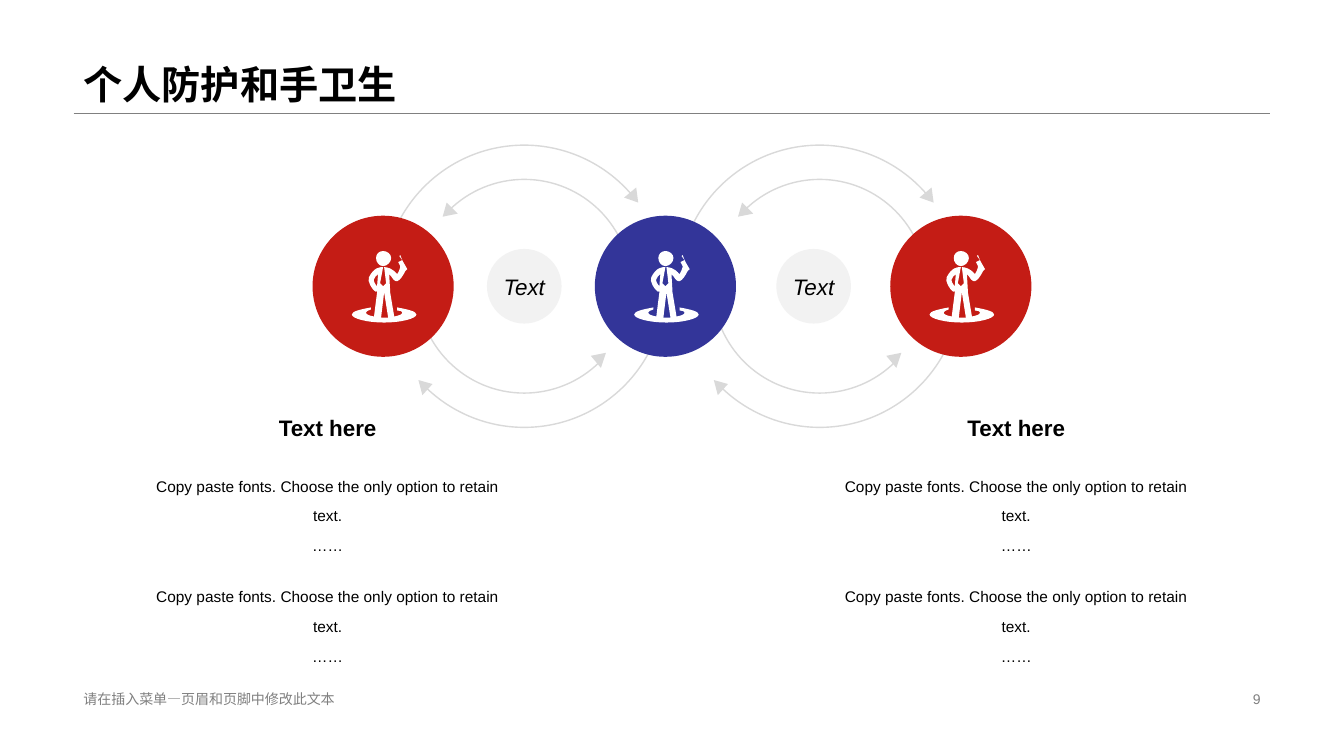
from dataclasses import dataclass
from math import cos, radians, sin, tan

from lxml.etree import Element, SubElement
from pptx import Presentation
from pptx.dml.color import RGBColor
from pptx.enum.shapes import MSO_CONNECTOR as CONN, MSO_SHAPE as SHAPE
from pptx.enum.text import MSO_ANCHOR as ANCHOR, PP_ALIGN as ALIGN
from pptx.oxml.ns import qn
from pptx.util import Pt

PX = 9144


@dataclass(frozen=True)
class Theme:
    font: str = "Arial"
    black: str = "000000"
    grey: str = "808080"
    arrow: str = "D9D9D9"
    pale: str = "F2F2F2"
    red: str = "C41C15"
    blue: str = "333599"
    white: str = "FFFFFF"
    title: int = 28
    heading: int = 16
    body: int = 11
    footer: int = 10


THEME = Theme()
LOOP_STEP = 293
LOOP_CENTER = (520, 284)
LOOP_ARROWS = [
    (140, 180, 319, [(111, -98), (99, -88), (113, -83)]),
    (106, 45, 184, [(66, 69), (76, 81), (81, 66)]),
    (106, 225, 360, [(-66, -72), (-77, -83), (-81, -69)]),
    (140, 0, 136, [(-101, 108), (-91, 97), (-105, 93)]),
]
PERSON = [
    "L 24 7 C 24 3 27 0 31 0 C 35 0 39 3 39 7 C 39 11 35 15 31 15 C 27 15 24 11 24 7",
    "L 64 63 C 64 67 49 71 32 71 C 15 71 0 67 0 63 C 0 60 8 58 19 56 L 19 58 "
    "C 16 59 14 60 14 61 C 14 63 17 64 22 65 L 25 41 L 25 40 C 24 41 23 40 23 40 "
    "C 20 38 15 30 17 26 C 22 16 28 16 30 16 L 31 16 L 28 32 L 31 35 L 34 32 L 32 16 "
    "C 35 16 40 17 45 23 C 46 21 48 18 48 16 L 48 15 L 46 11 L 50 9 L 47 5 L 48 4 "
    "L 50 9 L 51 11 L 55 18 L 53 20 C 51 24 48 29 45 30 L 44 30 C 43 30 42 29 41 28 "
    "C 40 26 38 24 37 23 L 38 40 L 38 41 L 42 65 C 47 64 50 63 50 61 "
    "C 50 60 48 59 45 59 L 45 56 C 56 58 64 60 64 63",
    "L 25 35 L 26 23 C 24 24 23 26 22 28 C 21 29 23 33 25 35",
    "L 36 66 L 32 41 L 29 66 L 36 66",
]
BODY = "Copy paste fonts. Choose the only option to retain text.\n……"


def rgb(value):
    return RGBColor.from_string(value)


def write(tf, text, size, color=THEME.black, bold=False, italic=False,
          align=ALIGN.LEFT, anchor=ANCHOR.MIDDLE, spacing=None):
    tf.word_wrap = True
    tf.vertical_anchor = anchor
    for i, line in enumerate(text.split("\n")):
        p = tf.add_paragraph() if i else tf.paragraphs[0]
        p.alignment = align
        p.line_spacing = spacing
        r = p.add_run()
        r.text = line
        f = r.font
        f.name, f.size, f.bold, f.italic = THEME.font, Pt(size), bold, italic
        f.color.rgb = rgb(color)


def text_box(s, box, text, size, **fmt):
    sp = s.shapes.add_textbox(*(v * PX for v in box))
    write(sp.text_frame, text, size, **fmt)


def style(sp, fill=None, line=None):
    sp.shadow.inherit = False
    if fill:
        sp.fill.solid()
        sp.fill.fore_color.rgb = rgb(fill)
    else:
        sp.fill.background()
    if line:
        sp.line.color.rgb = rgb(line)
        sp.line.width = Pt(1)
    else:
        sp.line.fill.background()


def outline(s, contours, close=True, **look):
    ends = [[(x * PX, y * PX) for *_, (x, y) in c] for c in contours]
    builder = s.shapes.build_freeform(*ends[0][0], scale=1.0)
    for i, points in enumerate(ends):
        if i:
            builder.move_to(*points[0])
        builder.add_line_segments(points[1:], close=close)
    sp = builder.convert_to_shape()
    edges = list(sp._element.iter(qn("a:lnTo")))
    for edge, segment in zip(edges, (seg for c in contours for seg in c[1:])):
        if len(segment) == 3:
            edge.tag = qn("a:cubicBezTo")
            for i, (x, y) in enumerate(segment[:2]):
                edge.insert(i, Element(qn("a:pt"), x=str(round(x * PX) - sp.left),
                                       y=str(round(y * PX) - sp.top)))
    style(sp, **look)


def disc(s, x, y, size, fill):
    sp = s.shapes.add_shape(SHAPE.OVAL, x * PX, y * PX, size * PX, size * PX)
    style(sp, fill=fill)
    return sp


def trace(commands, left, top):
    tokens = iter(commands.split())
    return [[(left + int(next(tokens)), top + int(next(tokens)))
             for _ in range(3 if command == "C" else 1)] for command in tokens]


def arc(cx, cy, radius, start, end):
    def at(angle, pull=0):
        a = radians(angle)
        return (cx + radius * (cos(a) - pull * sin(a)),
                cy + radius * (sin(a) + pull * cos(a)))

    stops = [start, *(q for q in range(0, 360, 90) if start < q < end), end]
    segments = [[at(start)]]
    for a, b in zip(stops, stops[1:]):
        pull = 4 / 3 * tan(radians(b - a) / 4)
        segments.append([at(a, pull), at(b, -pull), at(b)])
    return segments


def arrow_loop(s, cx, cy):
    for radius, start, end, head in LOOP_ARROWS:
        outline(s, [arc(cx, cy, radius, start, end)], close=False, line=THEME.arrow)
        outline(s, [[[(cx + x, cy + y)] for x, y in head]], fill=THEME.arrow)


def label_disc(s, x):
    tf = disc(s, x, 247, 74, THEME.pale).text_frame
    tf.margin_left = tf.margin_right = tf.margin_top = tf.margin_bottom = 0
    write(tf, "Text", THEME.heading, italic=True, align=ALIGN.CENTER)


def person_disc(s, x, color):
    disc(s, x, 214, 140, color)
    outline(s, [trace(part, x + 39, 249) for part in PERSON], fill=THEME.white)


def text_column(s, x):
    text_box(s, (x, 403, 384, 43), "Text here", THEME.heading,
             bold=True, align=ALIGN.CENTER)
    for y in (457, 567):
        text_box(s, (x, y, 384, 105), BODY, THEME.body, align=ALIGN.CENTER,
                 anchor=ANCHOR.TOP, spacing=1.6)


def title_rule(s):
    c = s.shapes.add_connector(CONN.STRAIGHT, 73 * PX, 112 * PX, 1260 * PX, 112 * PX)
    c.line.color.rgb = rgb(THEME.grey)
    c.line.width = Pt(0.25)
    SubElement(c._element.spPr, qn("a:effectLst"))


def main():
    prs = Presentation()
    prs.slide_width, prs.slide_height = 1333 * PX, 750 * PX
    s = prs.slides.add_slide(prs.slide_layouts[6])
    title_rule(s)
    text_box(s, (73, 0, 1187, 112), "个人防护和手卫生", THEME.title,
             bold=True, anchor=ANCHOR.BOTTOM, spacing=0.9)
    text_box(s, (73, 682, 453, 23), "请在插入菜单—页眉和页脚中修改此文本",
             THEME.footer, color=THEME.grey)
    text_box(s, (942, 682, 318, 23), "9", THEME.footer,
             color=THEME.grey, align=ALIGN.RIGHT)
    cx, cy = LOOP_CENTER
    for i in range(2):
        arrow_loop(s, cx + i * LOOP_STEP, cy)
    for x in (483, 770):
        label_disc(s, x)
    for x, color in ((310, THEME.red), (590, THEME.blue), (883, THEME.red)):
        person_disc(s, x, color)
    for x in (133, 816):
        text_column(s, x)
    prs.save("out.pptx")


if __name__ == "__main__":
    main()
